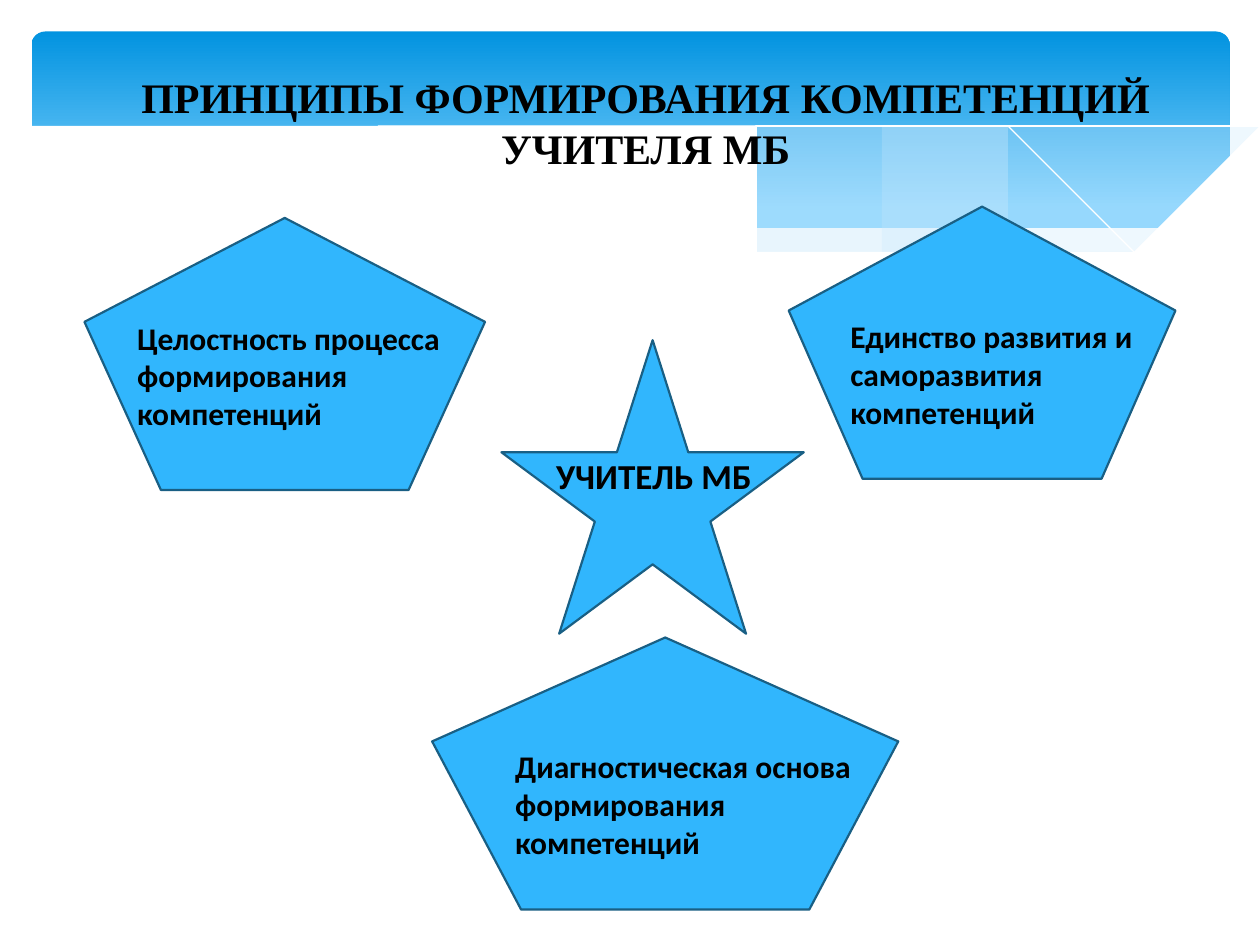
from dataclasses import dataclass

from lxml.etree import SubElement
from pptx import Presentation
from pptx.dml.color import RGBColor
from pptx.enum.shapes import MSO_SHAPE
from pptx.enum.text import MSO_AUTO_SIZE, PP_ALIGN
from pptx.oxml.ns import qn
from pptx.util import Inches, Pt


@dataclass(frozen=True)
class Theme:
    band_top: str = "0293E0"
    band_bottom: str = "83D3FE"
    wave: str = "C6E7FC"
    white: str = "FFFFFF"
    figure: str = "31B6FD"
    outline: str = "195F84"
    text: str = "000000"
    title_font: str = "Times New Roman"
    body_font: str = "Calibri"
    title_size: int = 24
    center_size: int = 20
    body_size: int = 18


THEME = Theme()

# Guide points of the header waves, in inches
RIGHT_WAVE_TOP = [(9.76, 0.94), (9.35, 1.01), (8.91, 1.1), (8.32, 1.25),
                  (7.53, 1.43), (7.06, 1.52), (6.61, 1.6)]
RIGHT_WAVE_BOTTOM = [(6.61, 1.6), (7.05, 1.65), (7.57, 1.7), (8.03, 1.72), (8.54, 1.7),
                     (8.97, 1.65), (9.35, 1.56), (9.76, 1.41)]
LONG_WAVE_TOP = [(8.93, 1.67), (8.37, 1.59), (7.41, 1.42), (6.29, 1.16), (5.55, 1),
                 (4.89, 0.89), (4.2, 0.82), (3.61, 0.8), (3.13, 0.82), (2.86, 0.86)]
LONG_WAVE_BOTTOM = [(2.86, 0.86), (3.42, 0.94), (4.04, 1.06), (4.91, 1.26), (5.66, 1.43),
                    (6.34, 1.56), (6.95, 1.65), (7.48, 1.7), (8.07, 1.73), (8.57, 1.71),
                    (8.93, 1.67)]
FALLING_LINE = [(3.09, 0.9), (3.44, 0.84), (4.01, 0.82), (4.69, 0.83), (5.33, 0.88),
                (6.08, 0.98), (6.95, 1.14), (7.95, 1.36), (9.07, 1.66)]
RISING_LINE = [(6.13, 1.51), (6.72, 1.35), (7.48, 1.17), (8.36, 0.99), (8.95, 0.88),
               (9.38, 0.83), (9.75, 0.8)]
WHITE_EDGE = [(9.77, 1.41), (9.3, 1.57), (8.87, 1.66), (8.37, 1.71), (7.78, 1.7),
              (7.08, 1.65), (6.26, 1.53), (5.55, 1.39), (4.47, 1.14), (3.65, 0.96),
              (2.92, 0.85), (2.3, 0.79), (1.77, 0.78), (1.19, 0.82), (0.76, 0.89),
              (0.46, 0.98), (0.23, 1.07)]

# Left, top, width of each pentagon; left, top of its label; wording
PRINCIPLES = [
    ((3.43, 5.06, 3.7), (3.99, 5.88), "Диагностическая основа формирования компетенций"),
    ((0.67, 1.73, 3.18), (0.99, 2.48), "Целостность процесса формирования компетенций"),
    ((6.26, 1.64, 3.07), (6.65, 2.47), "Единство развития и саморазвития компетенций"),
]


def color(code):
    return RGBColor.from_string(code)


def smooth(points, steps=6):
    """Return a Catmull-Rom curve through the points."""
    padded = [points[0], *points, points[-1]]
    curve = [points[0]]
    for a, b, c, d in zip(padded, padded[1:], padded[2:], padded[3:]):
        for step in range(1, steps + 1):
            t = step / steps
            curve.append(tuple(
                (2 * q + (r - p) * t + (2 * p - 5 * q + 4 * r - s) * t ** 2
                 + (3 * q - p - 3 * r + s) * t ** 3) / 2
                for p, q, r, s in zip(a, b, c, d)))
    return curve


def add_freeform(slide, points, fill=None, opacity=100, line=None):
    builder = slide.shapes.build_freeform(*points[0], scale=Inches(1))
    builder.add_line_segments(points[1:], close=fill is not None)
    shape = builder.convert_to_shape()
    shape.shadow.inherit = False
    if fill:
        shape.fill.solid()
        shape.fill.fore_color.rgb = color(fill)
        if opacity < 100:
            fill_color = shape.fill._xPr.find(qn("a:solidFill"))[0]
            SubElement(fill_color, qn("a:alpha"), val=str(opacity * 1000))
    else:
        shape.fill.background()
    if line:
        shape.line.color.rgb = color(line)
        shape.line.width = Pt(0)
    else:
        shape.line.fill.background()


def add_figure(slide, kind, left, top, width, height):
    shape = slide.shapes.add_shape(
        kind, Inches(left), Inches(top), Inches(width), Inches(height))
    shape.shadow.inherit = False
    shape.fill.solid()
    shape.fill.fore_color.rgb = color(THEME.figure)
    shape.line.color.rgb = color(THEME.outline)
    shape.line.width = Pt(1.25)


def add_text(slide, text, left, top, width, height, *, size=THEME.body_size,
             font=THEME.body_font, align=PP_ALIGN.LEFT):
    box = slide.shapes.add_textbox(
        Inches(left), Inches(top), Inches(width), Inches(height))
    frame = box.text_frame
    frame.word_wrap = True
    frame.auto_size = MSO_AUTO_SIZE.SHAPE_TO_FIT_TEXT
    paragraph = frame.paragraphs[0]
    paragraph.alignment = align
    run = paragraph.add_run()
    run.text = text
    run.font.name = font
    run.font.size = Pt(size)
    run.font.bold = True
    run.font.color.rgb = color(THEME.text)


def add_header(slide):
    # Gradient band
    band = slide.shapes.add_shape(MSO_SHAPE.ROUNDED_RECTANGLE, Inches(0.25), Inches(0.25),
                                  Inches(9.51), Inches(1.56))
    band.adjustments[0] = 0.07
    band.shadow.inherit = False
    band.line.fill.background()
    band.fill.gradient()
    band.fill.gradient_angle = 270
    stops = [(0, THEME.band_top), (0.9, THEME.band_bottom)]
    for stop, (position, code) in zip(band.fill.gradient_stops, stops):
        stop.position = position
        stop.color.rgb = color(code)

    # Translucent waves, thin lines and the white lower edge
    add_freeform(slide, smooth(RIGHT_WAVE_TOP) + smooth(RIGHT_WAVE_BOTTOM),
                 fill=THEME.wave, opacity=29)
    add_freeform(slide, smooth(LONG_WAVE_TOP) + smooth(LONG_WAVE_BOTTOM),
                 fill=THEME.wave, opacity=40)
    for curve in (FALLING_LINE, RISING_LINE):
        add_freeform(slide, smooth(curve), line=THEME.white)
    add_freeform(slide, smooth(WHITE_EDGE) + [(0.23, 2.24), (9.77, 2.24)], fill=THEME.white)


def main():
    presentation = Presentation()
    presentation.slide_width = Inches(10)
    presentation.slide_height = Inches(7.5)
    slide = presentation.slides.add_slide(presentation.slide_layouts[6])

    add_header(slide)

    # Pentagons around the star
    for (left, top, width), _, _ in PRINCIPLES:
        add_figure(slide, MSO_SHAPE.REGULAR_PENTAGON, left, top, width, 2.16)
    add_figure(slide, MSO_SHAPE.STAR_5_POINT, 3.98, 2.7, 2.4, 2.33)

    # Title and labels
    add_text(slide, "ПРИНЦИПЫ ФОРМИРОВАНИЯ КОМПЕТЕНЦИЙ УЧИТЕЛЯ МБ", 0.91, 0.52, 8.43, 0.91,
             size=THEME.title_size, font=THEME.title_font, align=PP_ALIGN.CENTER)
    add_text(slide, "УЧИТЕЛЬ МБ", 3.18, 3.56, 4.02, 0.44,
             size=THEME.center_size, align=PP_ALIGN.CENTER)
    for _, (left, top), label in PRINCIPLES:
        add_text(slide, label, left, top, 3.07, 1.01)

    presentation.save("out.pptx")


if __name__ == "__main__":
    main()
